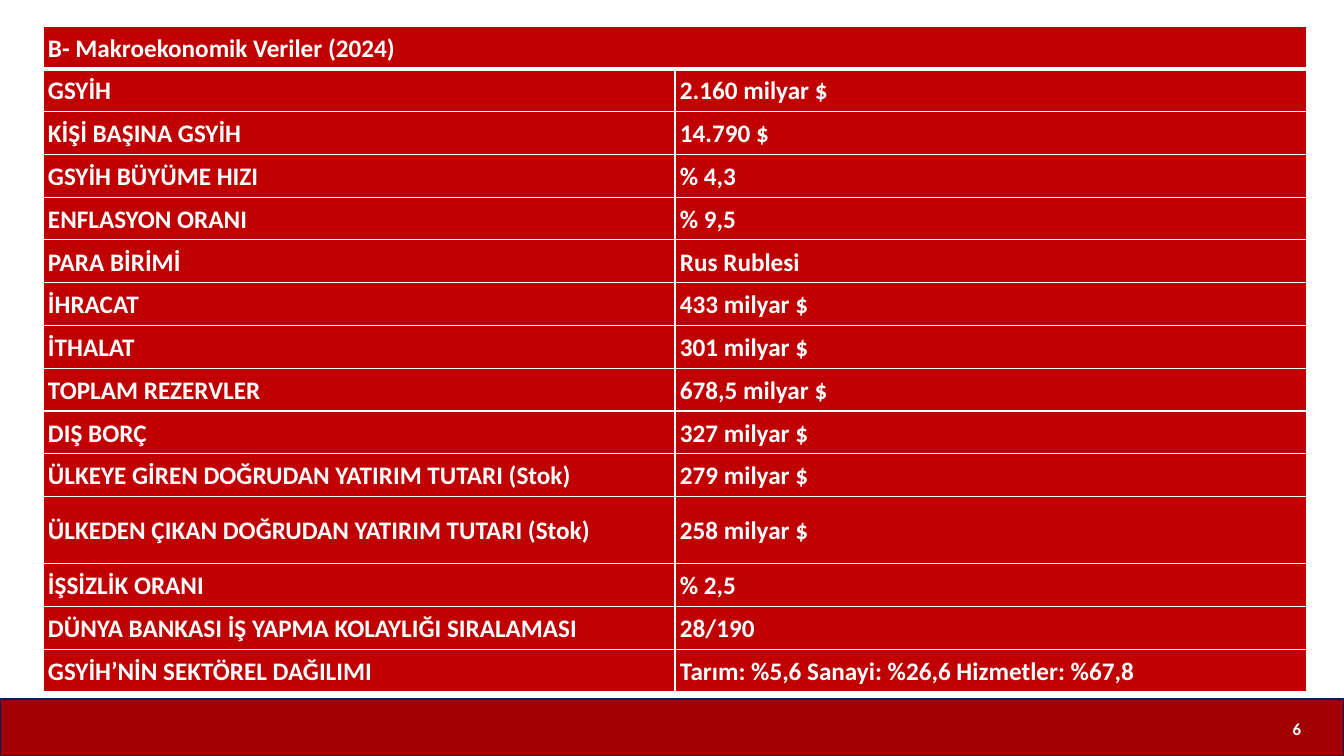
from lxml import etree
from pptx import Presentation
from pptx.dml.color import RGBColor
from pptx.enum.shapes import MSO_SHAPE
from pptx.enum.text import MSO_ANCHOR, PP_ALIGN
from pptx.oxml.ns import qn
from pptx.util import Pt

RECTANGLE = MSO_SHAPE.RECTANGLE
MIDDLE = MSO_ANCHOR.MIDDLE
CENTER = PP_ALIGN.CENTER

# Content
HEADING = "B- Makroekonomik Veriler (2024)"
INDICATORS = [
    ("GSYİH", "2.160 milyar $"),
    ("KİŞİ BAŞINA GSYİH", "14.790 $"),
    ("GSYİH BÜYÜME HIZI", "% 4,3"),
    ("ENFLASYON ORANI", "% 9,5"),
    ("PARA BİRİMİ", "Rus Rublesi"),
    ("İHRACAT", "433 milyar $"),
    ("İTHALAT", "301 milyar $"),
    ("TOPLAM REZERVLER", "678,5 milyar $"),
    ("DIŞ BORÇ", "327 milyar $"),
    ("ÜLKEYE GİREN DOĞRUDAN YATIRIM TUTARI (Stok)", "279 milyar $"),
    ("ÜLKEDEN ÇIKAN DOĞRUDAN YATIRIM TUTARI (Stok)", "258 milyar $"),
    ("İŞSİZLİK ORANI", "% 2,5"),
    ("DÜNYA BANKASI İŞ YAPMA KOLAYLIĞI SIRALAMASI", "28/190"),
    ("GSYİH’NİN SEKTÖREL DAĞILIMI", "Tarım: %5,6 Sanayi: %26,6 Hizmetler: %67,8"),
]
PAGE_NUMBER = "6"

# Layout in px
SLIDE_SIZE = (1344, 756)
TABLE_BOX = (43, 26, 1264, 666)
TALL_ROW, TALL_HEIGHT = 11, 67
FOOTER_BOX = (0, 699, 1344, 57)
NUMBER_BOX = (1273, 699, 48, 60)

# Formats
WHITE, RED, DARK_RED, NAVY = "FFFFFF", "C00000", "A00000", "002060"
CELL_FORMAT = {"margin_left": 5, "margin_right": 5, "margin_top": 0, "margin_bottom": 0}
PARAGRAPH_FORMAT = {"line_spacing": 1.07, "space_after": Pt(8)}


def px(length):
    return round(length * 914400 / 100.8)


def color(value):
    return RGBColor.from_string(value)


def write(paragraph, text, size):
    paragraph.text = text
    font = paragraph.runs[0].font
    for name, value in {"name": "Calibri", "size": Pt(size), "bold": True}.items():
        setattr(font, name, value)
    font.color.rgb = color(WHITE)


def add_borders(cell, bottom_width):
    properties = cell._tc.get_or_add_tcPr()
    for side, width in (("L", 1), ("R", 1), ("T", 1), ("B", bottom_width)):
        line = etree.SubElement(properties, qn(f"a:ln{side}"), w=str(Pt(width)))
        fill = etree.SubElement(line, qn("a:solidFill"))
        etree.SubElement(fill, qn("a:srgbClr"), val=WHITE)


def format_cell(cell, text, bottom_width):
    for name, value in CELL_FORMAT.items():
        setattr(cell, name, px(value))
    cell.vertical_anchor = MIDDLE
    add_borders(cell, bottom_width)
    cell.fill.solid()
    cell.fill.fore_color.rgb = color(RED)
    paragraph = cell.text_frame.paragraphs[0]
    for name, value in PARAGRAPH_FORMAT.items():
        setattr(paragraph, name, value)
    if text:
        write(paragraph, text, 18)


def add_footer(slide):
    band = slide.shapes.add_shape(RECTANGLE, *map(px, FOOTER_BOX))
    band.shadow.inherit = False
    band.fill.solid()
    band.fill.fore_color.rgb = color(DARK_RED)
    band.line.color.rgb = color(NAVY)
    band.line.width = Pt(1)

    number = slide.shapes.add_textbox(*map(px, NUMBER_BOX))
    frame = number.text_frame
    frame.word_wrap = True
    frame.vertical_anchor = MIDDLE
    frame.paragraphs[0].alignment = CENTER
    write(frame.paragraphs[0], PAGE_NUMBER, 12)


def add_indicator_table(slide):
    rows = [(HEADING, "")] + INDICATORS
    left, top, width, height = TABLE_BOX
    table = slide.shapes.add_table(len(rows), 2, *map(px, TABLE_BOX)).table
    table.horz_banding = False
    for column in table.columns:
        column.width = px(width / 2)
    row_height = (height - TALL_HEIGHT) / (len(rows) - 1)
    for row_index, texts in enumerate(rows):
        table.rows[row_index].height = px(TALL_HEIGHT if row_index == TALL_ROW else row_height)
        for column_index, text in enumerate(texts):
            format_cell(table.cell(row_index, column_index), text, 3 if row_index == 0 else 1)
    table.cell(0, 0).merge(table.cell(0, 1))


def main():
    presentation = Presentation()
    presentation.slide_width, presentation.slide_height = map(px, SLIDE_SIZE)
    slide = presentation.slides.add_slide(presentation.slide_layouts[6])
    add_footer(slide)
    add_indicator_table(slide)
    presentation.save("out.pptx")


if __name__ == "__main__":
    main()
